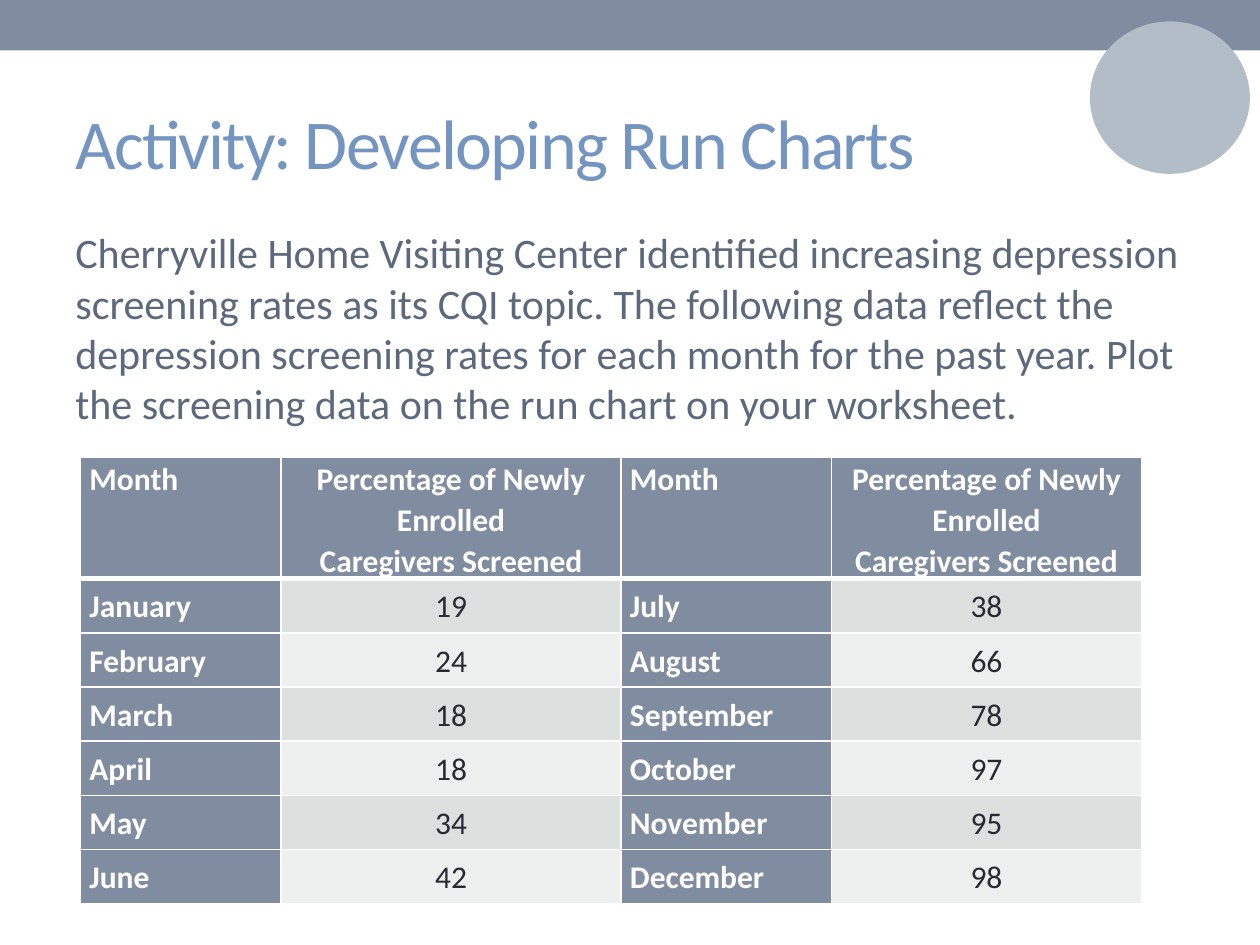
from lxml.etree import SubElement
from pptx import Presentation
from pptx.dml.color import RGBColor
from pptx.enum.shapes import MSO_SHAPE as Shape
from pptx.enum.text import MSO_ANCHOR as Anchor, MSO_AUTO_SIZE as AutoSize, PP_ALIGN as Align
from pptx.oxml.ns import qn
from pptx.util import Inches, Pt

TITLE = "Activity: Developing Run Charts"
BODY = ("Cherryville Home Visiting Center identified increasing depression screening "
        "rates as its CQI topic. The following data reflect the depression screening "
        "rates for each month for the past year. Plot the screening data on the run "
        "chart on your worksheet.")
HEADERS = ["Month", "Percentage of Newly Enrolled\nCaregivers Screened"] * 2
RATES = [
    ("January", 19), ("February", 24), ("March", 18),
    ("April", 18), ("May", 34), ("June", 42),
    ("July", 38), ("August", 66), ("September", 78),
    ("October", 97), ("November", 95), ("December", 98),
]

FONT = "Calibri"
SLATE, CIRCLE, WHITE, INK = "808DA0", "B3BDC8", "FFFFFF", "292934"
TITLE_BLUE, BODY_GREY = "7595C1", "5C697C"
BANDS = ["DCE0DE", "EEF0EF"]
COL_WIDTHS = [1.59, 2.7, 1.67, 2.46]
HEADER_HEIGHT, ROW_HEIGHT = 0.96, 0.43


def rgb(value):
    return RGBColor.from_string(value)


def style(p, size, color, bold=False):
    p.font.name, p.font.size, p.font.bold = FONT, Pt(size), bold
    p.font.color.rgb = rgb(color)


def add_plain_shape(slide, kind, box, color):
    s = slide.shapes.add_shape(kind, *map(Inches, box))
    s.shadow.inherit = False
    s.fill.solid()
    s.fill.fore_color.rgb = rgb(color)
    s.line.fill.background()


def add_borders(cell, bottom):
    """Draw white cell borders; they must precede the fill in the cell's XML."""
    tc_pr = cell._tc.get_or_add_tcPr()
    for side, width in (("L", 1), ("R", 1), ("T", 1), ("B", bottom)):
        ln = SubElement(tc_pr, qn(f"a:ln{side}"), w=str(Pt(width)))
        fill = SubElement(ln, qn("a:solidFill"))
        SubElement(fill, qn("a:srgbClr"), val=WHITE)


def fill_cell(cell, text, row, col):
    is_header, is_rate = row == 0, col % 2 == 1
    is_dark = is_header or not is_rate
    add_borders(cell, 3 if is_header else 1)
    cell.fill.solid()
    cell.fill.fore_color.rgb = rgb(SLATE if is_dark else BANDS[(row - 1) % 2])
    cell.margin_left = cell.margin_right = Inches(0.07)
    cell.margin_top = cell.margin_bottom = 0
    cell.vertical_anchor = Anchor.TOP if is_header else Anchor.MIDDLE
    cell.text_frame.text = str(text)
    for p in cell.text_frame.paragraphs:
        p.alignment = Align.CENTER if is_rate else Align.LEFT
        p.line_spacing = 1.07
        style(p, 18, WHITE if is_dark else INK, is_dark)


def add_rate_table(slide):
    half = len(RATES) // 2
    rows = [HEADERS] + [a + b for a, b in zip(RATES[:half], RATES[half:])]
    heights = [HEADER_HEIGHT] + [ROW_HEIGHT] * half
    box = (0.64, 3.63, sum(COL_WIDTHS), sum(heights))
    table = slide.shapes.add_table(len(rows), len(COL_WIDTHS), *map(Inches, box)).table
    for column, width in zip(table.columns, COL_WIDTHS):
        column.width = Inches(width)
    for r, (values, height) in enumerate(zip(rows, heights)):
        table.rows[r].height = Inches(height)
        for c, value in enumerate(values):
            fill_cell(table.cell(r, c), value, r, c)


def add_title(slide):
    title = slide.shapes.title
    title.left, title.top, title.width, title.height = map(Inches, (0.5, 0.58, 9, 1.08))
    tf = title.text_frame
    tf.text = TITLE
    tf.auto_size, tf.vertical_anchor = AutoSize.NONE, Anchor.MIDDLE
    p = tf.paragraphs[0]
    p.alignment = Align.LEFT
    style(p, 40, TITLE_BLUE)
    p.runs[0].font._element.set("spc", "-100")


def add_body(slide):
    tf = slide.shapes.add_textbox(*map(Inches, (0.5, 1.75, 9.2, 1.8))).text_frame
    tf.word_wrap = True
    tf.text = BODY
    style(tf.paragraphs[0], 24, BODY_GREY)


def main():
    prs = Presentation()
    prs.slide_width, prs.slide_height = Inches(10), Inches(7.5)
    slide = prs.slides.add_slide(prs.slide_layouts[5])
    add_plain_shape(slide, Shape.RECTANGLE, (0, 0, 10, 0.4), SLATE)
    add_title(slide)
    add_body(slide)
    add_rate_table(slide)
    add_plain_shape(slide, Shape.OVAL, (8.65, 0.17, 1.27, 1.21), CIRCLE)
    prs.save("out.pptx")


if __name__ == "__main__":
    main()
